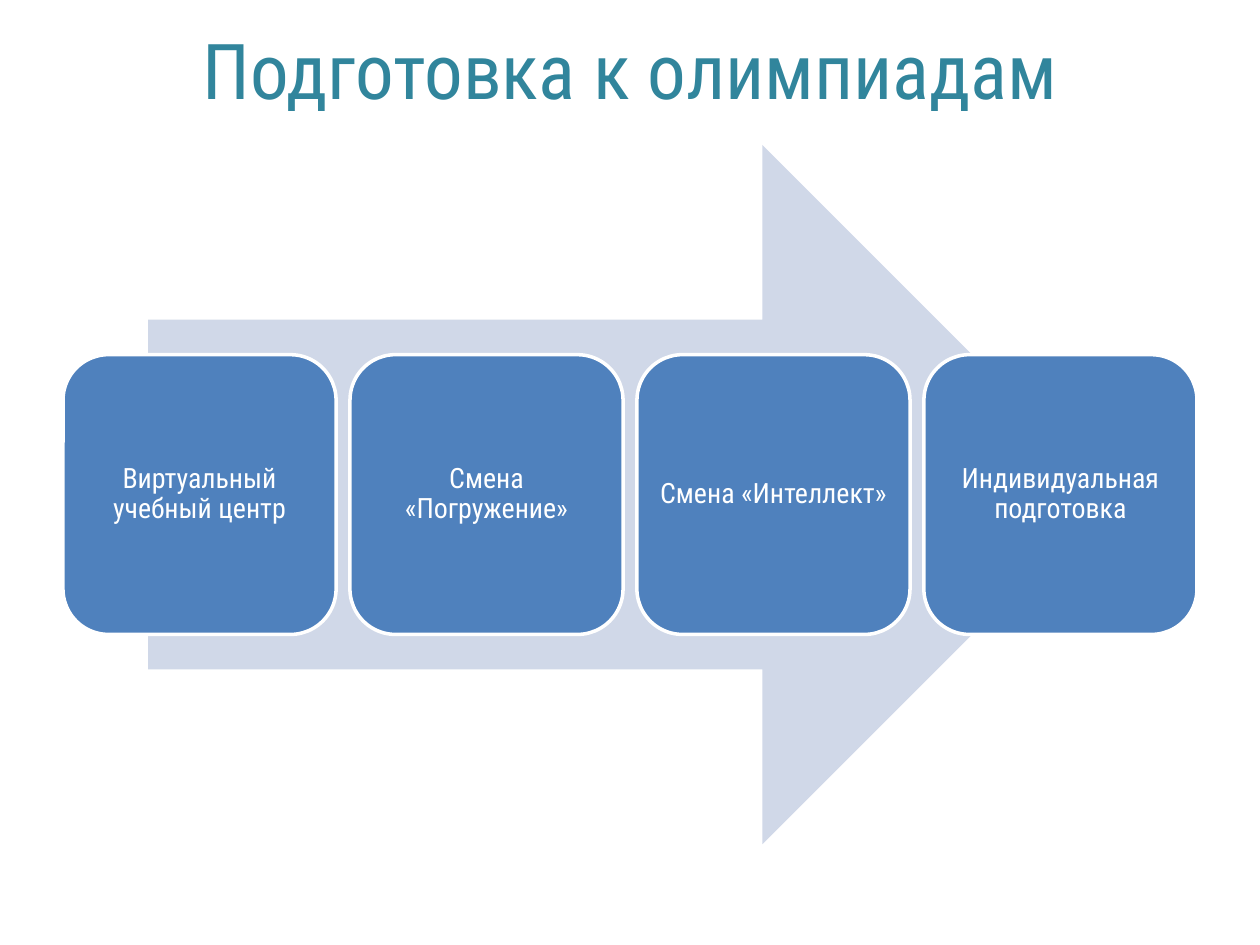
from pptx import Presentation
from pptx.dml.color import RGBColor
from pptx.enum.shapes import MSO_SHAPE
from pptx.enum.text import MSO_ANCHOR, MSO_AUTO_SIZE, PP_ALIGN
from pptx.util import Inches, Pt

ARROW = MSO_SHAPE.RIGHT_ARROW
ROUNDED = MSO_SHAPE.ROUNDED_RECTANGLE
MIDDLE = MSO_ANCHOR.MIDDLE
CENTER = PP_ALIGN.CENTER
NO_AUTOFIT = MSO_AUTO_SIZE.NONE

FONT = "Roboto Condensed"
TITLE_ONLY = 5
STAGES = [
    "Виртуальный учебный центр",
    "Смена «Погружение»",
    "Смена «Интеллект»",
    "Индивидуальная подготовка",
]


def color(value):
    return RGBColor.from_string(value)


def write_text(shape, text, *, size, fill, inset_x=0.1, inset_y=0.05):
    frame = shape.text_frame
    frame.word_wrap = True
    frame.auto_size = NO_AUTOFIT
    frame.vertical_anchor = MIDDLE
    frame.margin_left = frame.margin_right = Inches(inset_x)
    frame.margin_top = frame.margin_bottom = Inches(inset_y)
    para = frame.paragraphs[0]
    para.alignment = CENTER
    para.line_spacing = 0.9
    span = para.add_run()
    span.text = text
    span.font.name = FONT
    span.font.size = Pt(size)
    span.font.color.rgb = color(fill)


def add_block(page, kind, left, top, width, height, fill, line=None):
    block = page.shapes.add_shape(
        kind, Inches(left), Inches(top), Inches(width), Inches(height)
    )
    block.shadow.inherit = False
    block.fill.solid()
    block.fill.fore_color.rgb = color(fill)
    if line:
        block.line.color.rgb = color(line)
        block.line.width = Pt(2)
    else:
        block.line.fill.background()
    return block


def place_title(page, text, left, top, width, height):
    title = page.shapes.title
    title.left, title.top = Inches(left), Inches(top)
    title.width, title.height = Inches(width), Inches(height)
    write_text(title, text, size=44, fill="31859C")


def place_process(page, stages, left, top, width, height):
    arrow_width = width * 0.85
    arrow_left = left + (width - arrow_width) / 2
    add_block(page, ARROW, arrow_left, top, arrow_width, height, "D0D8E8")

    gap = 0.11
    card_width = (width - gap * (len(stages) - 1)) / len(stages)
    card_height = height * 0.4
    card_top = top + (height - card_height) / 2
    for index, stage in enumerate(stages):
        card_left = left + index * (card_width + gap)
        card = add_block(page, ROUNDED, card_left, card_top, card_width,
                         card_height, "4F81BD", line="FFFFFF")
        write_text(card, stage, size=16, fill="FFFFFF",
                   inset_x=0.07, inset_y=0.07)


def main():
    deck = Presentation()
    deck.slide_width, deck.slide_height = Inches(10), Inches(7.5)
    page = deck.slides.add_slide(deck.slide_layouts[TITLE_ONLY])
    place_process(page, STAGES, 0.5, 1.15, 9, 5.55)
    place_title(page, "Подготовка к олимпиадам", 0.51, -0.03, 8.99, 1.25)
    deck.save("out.pptx")


if __name__ == "__main__":
    main()
